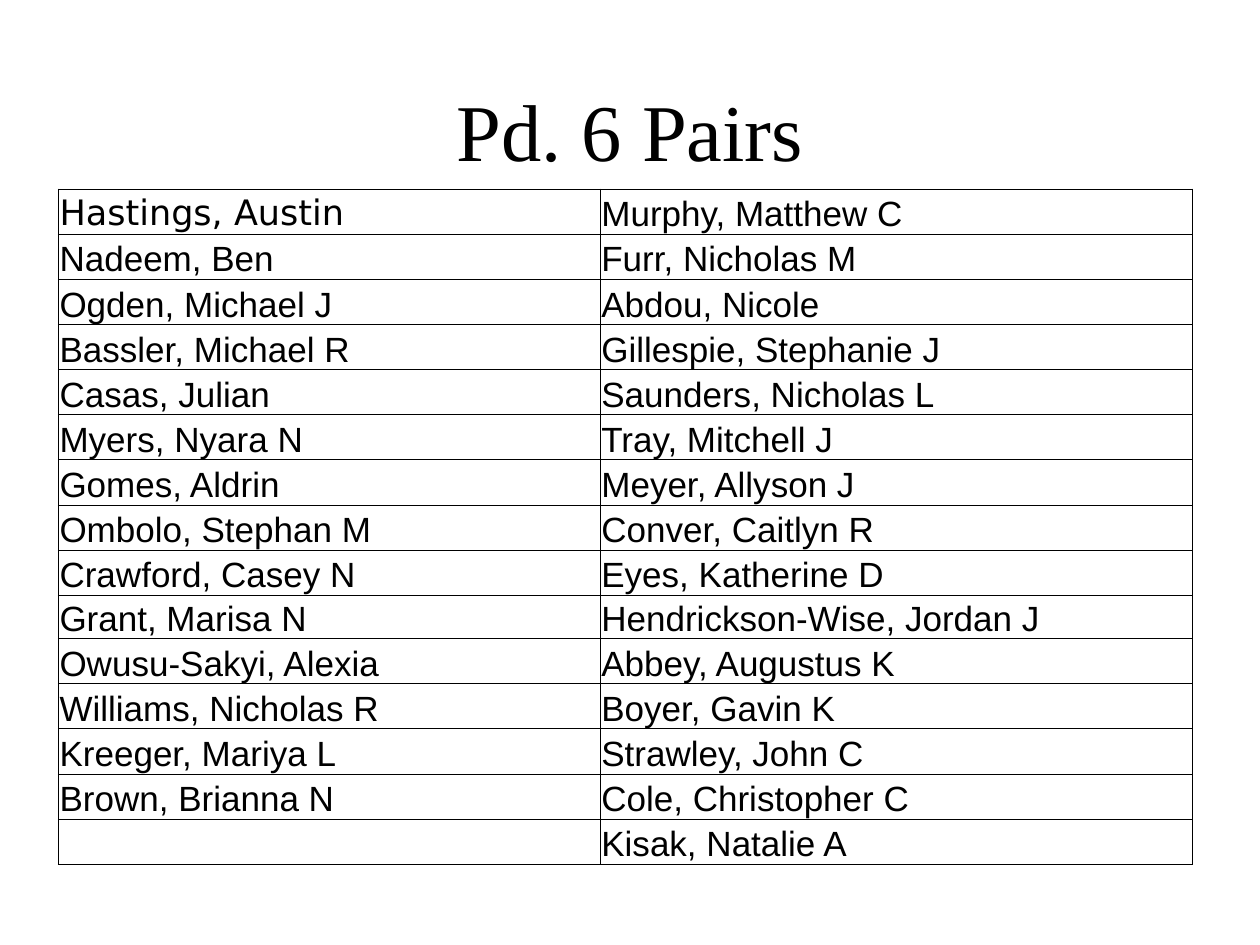
import dataclasses

import lxml.etree
import pptx
import pptx.dml.color
import pptx.enum.text
import pptx.oxml.ns
import pptx.util

Pt = pptx.util.Pt
ANCHOR = pptx.enum.text.MSO_ANCHOR
ALIGN = pptx.enum.text.PP_ALIGN


@dataclasses.dataclass(frozen=True)
class Theme:
    ink: str = "000000"
    paper: str = "FFFFFF"
    serif: str = "Times New Roman"
    sans: str = "Arial"
    first: str = "DejaVu Sans"
    title: float = 46
    body: float = 20
    rule: float = 0.5


THEME = Theme()

PAIRS = [
    ("Hastings, Austin", "Murphy, Matthew C"),
    ("Nadeem, Ben", "Furr, Nicholas M"),
    ("Ogden, Michael J", "Abdou, Nicole"),
    ("Bassler, Michael R", "Gillespie, Stephanie J"),
    ("Casas, Julian", "Saunders, Nicholas L"),
    ("Myers, Nyara N", "Tray, Mitchell J"),
    ("Gomes, Aldrin", "Meyer, Allyson J"),
    ("Ombolo, Stephan M", "Conver, Caitlyn R"),
    ("Crawford, Casey N", "Eyes, Katherine D"),
    ("Grant, Marisa N", "Hendrickson-Wise, Jordan J"),
    ("Owusu-Sakyi, Alexia", "Abbey, Augustus K"),
    ("Williams, Nicholas R", "Boyer, Gavin K"),
    ("Kreeger, Mariya L", "Strawley, John C"),
    ("Brown, Brianna N", "Cole, Christopher C"),
    ("", "Kisak, Natalie A"),
]
WIDTHS = [309.6, 338.4]
TALL, SHORT, TIGHT = 25.8, 14.4, 9


def write(frame, text, size=THEME.body, face=THEME.sans, align=ALIGN.LEFT):
    para = frame.paragraphs[0]
    para.alignment = align
    if text:
        run = para.add_run()
        run.text = text
        run.font.size = Pt(size)
        run.font.name = face
        run.font.color.rgb = pptx.dml.color.RGBColor.from_string(THEME.ink)


def border(cell):
    props = cell._tc.get_or_add_tcPr()
    tag = pptx.oxml.ns.qn
    for side in ("a:lnL", "a:lnR", "a:lnT", "a:lnB"):
        line = lxml.etree.SubElement(props, tag(side), w=str(Pt(THEME.rule)))
        fill = lxml.etree.SubElement(line, tag("a:solidFill"))
        lxml.etree.SubElement(fill, tag("a:srgbClr"), val=THEME.ink)


def style(cell):
    border(cell)
    cell.fill.solid()
    cell.fill.fore_color.rgb = pptx.dml.color.RGBColor.from_string(THEME.paper)
    cell.margin_left = cell.margin_right = cell.margin_top = Pt(0.72)
    cell.margin_bottom = 0
    cell.vertical_anchor = ANCHOR.BOTTOM


def title(slide):
    box = slide.shapes.add_textbox(Pt(72), Pt(39.6), Pt(576), Pt(68.4))
    frame = box.text_frame
    frame.word_wrap = True
    frame.vertical_anchor = ANCHOR.MIDDLE
    write(frame, "Pd. 6 Pairs", size=THEME.title, face=THEME.serif, align=ALIGN.CENTER)


def roster(slide):
    highs = [SHORT if i == TIGHT else TALL for i in range(len(PAIRS))]
    table = slide.shapes.add_table(
        len(PAIRS), len(WIDTHS), Pt(33.3), Pt(108), Pt(sum(WIDTHS)), Pt(sum(highs))
    ).table
    table.first_row = table.horz_banding = False
    for col, width in zip(table.columns, WIDTHS):
        col.width = Pt(width)
    for r, (pair, high) in enumerate(zip(PAIRS, highs)):
        table.rows[r].height = Pt(high)
        for c, name in enumerate(pair):
            cell = table.cell(r, c)
            style(cell)
            face = THEME.first if r == c == 0 else THEME.sans
            write(cell.text_frame, name, face=face)


def main():
    deck = pptx.Presentation()
    deck.slide_width, deck.slide_height = Pt(720), Pt(540)
    slide = deck.slides.add_slide(deck.slide_layouts[6])
    title(slide)
    roster(slide)
    deck.save("out.pptx")


if __name__ == "__main__":
    main()
